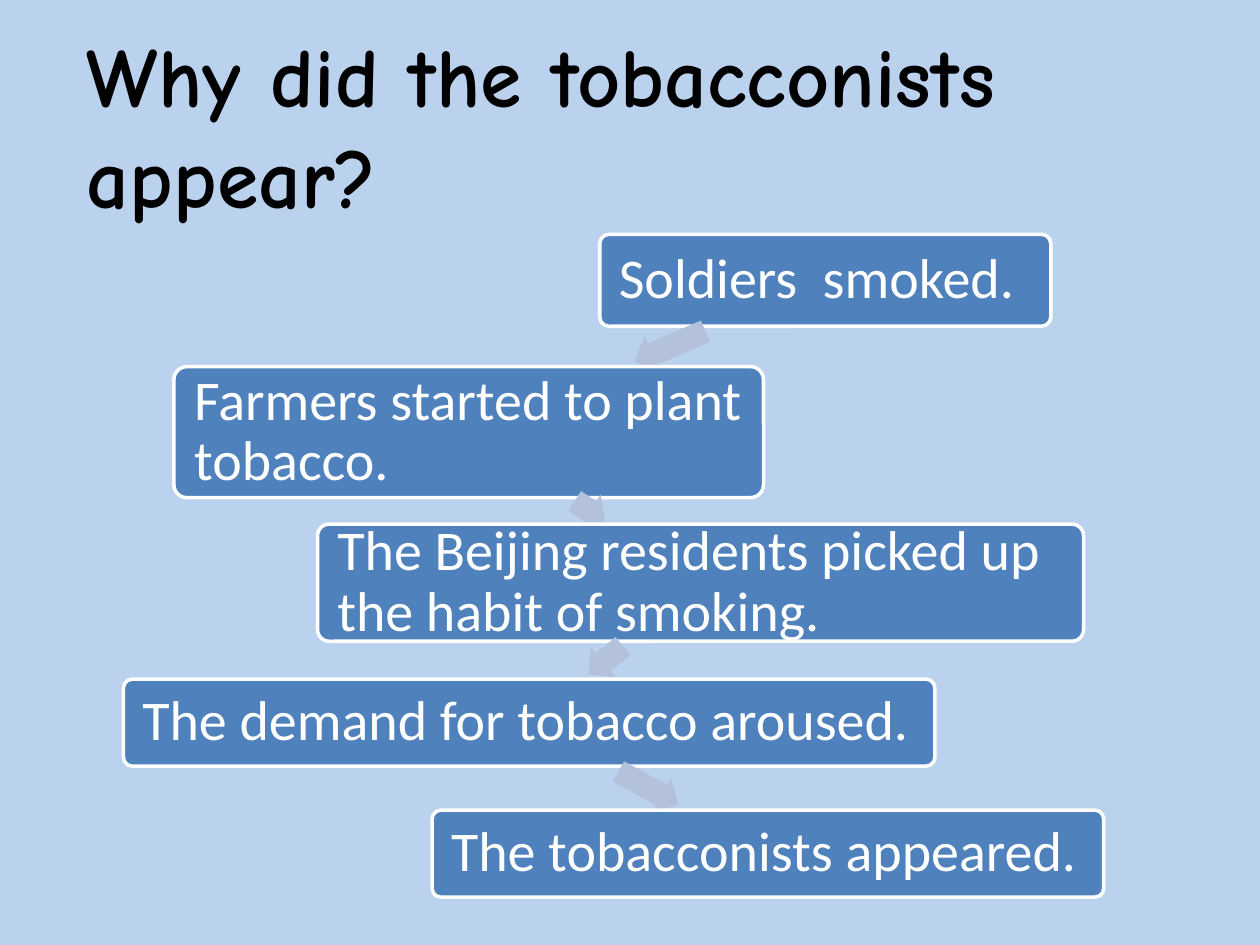
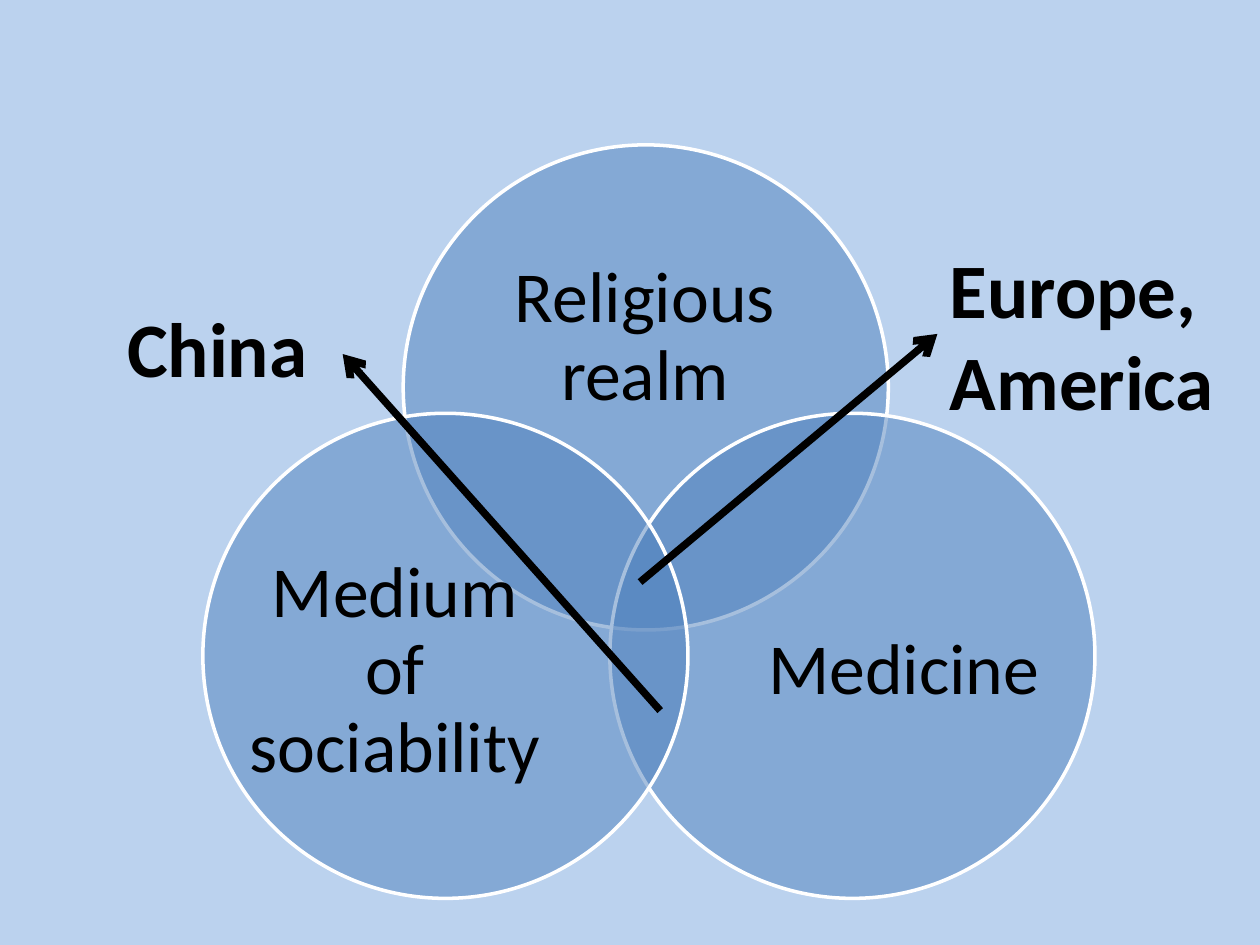
import math
import lxml.etree
import pptx
import pptx.dml.color
import pptx.enum.shapes
import pptx.enum.text
import pptx.oxml.ns
import pptx.util

Inches = pptx.util.Inches
SHAPE = pptx.enum.shapes.MSO_SHAPE
ALIGN = pptx.enum.text.PP_ALIGN
ANCHOR = pptx.enum.text.MSO_ANCHOR
FIT = pptx.enum.text.MSO_AUTO_SIZE

BACK, BLUE, GREY = "BBD2EE", "4F81BD", "B3C1DB"
WHITE, BLACK = "FFFFFF", "000000"
TITLE = {"name": "Comic Neue", "size": pptx.util.Pt(48), "bold": True}
STEP = {"name": "Calibri", "size": pptx.util.Pt(32), "bold": False}
REALM = {"name": "Calibri", "size": pptx.util.Pt(41), "bold": False}
PLACE = {"name": "Calibri", "size": pptx.util.Pt(44), "bold": True}

STEPS = [
    ("Soldiers  smoked.", 4.76, 1.86, 3.58, 0.73),
    ("Farmers started to plant tobacco.", 1.38, 2.91, 4.68, 1.04),
    ("The Beijing residents picked up the habit of smoking.", 2.52, 4.16, 6.08, 0.93),
    ("The demand for tobacco aroused.", 0.98, 5.39, 6.44, 0.69),
    ("The tobacconists appeared.", 3.43, 6.43, 5.33, 0.69),
]
RING = 3.85
REALMS = [
    ("Religious realm", (3.2, 1.15), (3.71, 1.82, 2.82, 1.73)),
    ("Medicine", (4.84, 3.28), (6.02, 4.27, 2.31, 2.12)),
    ("Medium of sociability", (1.61, 3.28), (1.98, 4.27, 2.31, 2.12)),
]
PLACES = [
    ("Europe,\nAmerica", (7.44, 1.86, 2.32, 1.58), (5.08, 4.62), (7.44, 2.65)),
    ("China", (0.91, 2.33, 1.65, 0.84), (5.24, 5.64), (2.72, 2.81)),
]


def tint(color, code):
    color.rgb = pptx.dml.color.RGBColor.from_string(code)


def add_node(parent, tag, **attrs):
    return lxml.etree.SubElement(parent, pptx.oxml.ns.qn(tag), attrs)


def add_slide(deck, index):
    slide = deck.slides.add_slide(deck.slide_layouts[index])
    fill = slide.background.fill
    fill.solid()
    tint(fill.fore_color, BACK)
    return slide


def put_text(frame, text, font, code, align=ALIGN.LEFT, space=1.0, inset=(0.1, 0.05), wrap=True):
    side, edge = inset
    look = {
        "text": text, "word_wrap": wrap, "auto_size": FIT.NONE,
        "vertical_anchor": ANCHOR.MIDDLE,
        "margin_left": Inches(side), "margin_right": Inches(side),
        "margin_top": Inches(edge), "margin_bottom": Inches(edge),
    }
    for key, value in look.items():
        setattr(frame, key, value)
    for para in frame.paragraphs:
        para.alignment, para.line_spacing = align, space
        for run in para.runs:
            for key, value in font.items():
                setattr(run.font, key, value)
            tint(run.font.color, code)


def add_title(slide, text, box):
    title = slide.shapes.title
    title.left, title.top, title.width, title.height = map(Inches, box)
    put_text(title.text_frame, text, TITLE, BLACK)


def add_label(slide, text, box, font, **look):
    label = slide.shapes.add_textbox(*map(Inches, box))
    put_text(label.text_frame, text, font, BLACK, **look)


def add_form(slide, kind, box, code, edge=None):
    form = slide.shapes.add_shape(kind, *map(Inches, box))
    form.shadow.inherit = False
    form.fill.solid()
    tint(form.fill.fore_color, code)
    if edge:
        tint(form.line.color, edge)
        form.line.width = pptx.util.Pt(2)
    else:
        form.line.fill.background()
    return form


def add_step(slide, text, box):
    step = add_form(slide, SHAPE.ROUNDED_RECTANGLE, box, BLUE, WHITE)
    step.adjustments[0] = 0.1
    put_text(step.text_frame, text, STEP, WHITE, space=0.9, inset=(0.13, 0))


def add_arrow(slide, start, end):
    x1, y1 = start[0] + start[2] / 2, start[1] + start[3] / 2
    x2, y2 = end[0] + end[2] / 2, end[1] + end[3] / 2
    base = start[1] + start[3]
    gap = end[1] - base
    turn = math.atan2(y2 - y1, x2 - x1)
    width, height = 0.75 * gap / math.sin(turn), 0.31
    mid = base + gap / 2
    x = x1 + (mid - y1) / math.tan(turn)
    box = (x - width / 2, mid - height / 2, width, height)
    arrow = add_form(slide, SHAPE.RIGHT_ARROW, box, GREY)
    arrow.adjustments[0], arrow.adjustments[1] = 0.6, 0.5
    arrow.rotation = math.degrees(turn)


def add_ring(slide, spot):
    ring = add_form(slide, SHAPE.OVAL, (*spot, RING, RING), BLUE, WHITE)
    paint = ring.fill._xPr.find(pptx.oxml.ns.qn("a:solidFill"))
    add_node(paint[0], "a:alpha", val="50000")


def add_line(slide, start, end):
    kind = pptx.enum.shapes.MSO_CONNECTOR.STRAIGHT
    line = slide.shapes.add_connector(kind, *map(Inches, start + end))
    tint(line.line.color, BLACK)
    line.line.width = pptx.util.Pt(4.25)
    add_node(line.line._get_or_add_ln(), "a:tailEnd", type="arrow")
    add_node(line._element.spPr, "a:effectLst")


def draw_steps(deck):
    slide = add_slide(deck, 5)
    add_title(slide, "Why did the tobacconists \vappear?", (0.59, 0.21, 9.13, 1.55))
    last = None
    for text, *box in STEPS:
        if last:
            add_arrow(slide, last, box)
        add_step(slide, text, box)
        last = box


def draw_realms(deck):
    slide = add_slide(deck, 6)
    for text, spot, box in REALMS:
        add_ring(slide, spot)
        add_label(slide, text, box, REALM, align=ALIGN.CENTER, space=0.9, inset=(0, 0))
    for text, box, start, end in PLACES:
        add_line(slide, start, end)
        add_label(slide, text, box, PLACE, wrap=False)


def main():
    deck = pptx.Presentation()
    deck.slide_width, deck.slide_height = Inches(10), Inches(7.5)
    draw_steps(deck)
    draw_realms(deck)
    deck.save("out.pptx")


if __name__ == "__main__":
    main()
